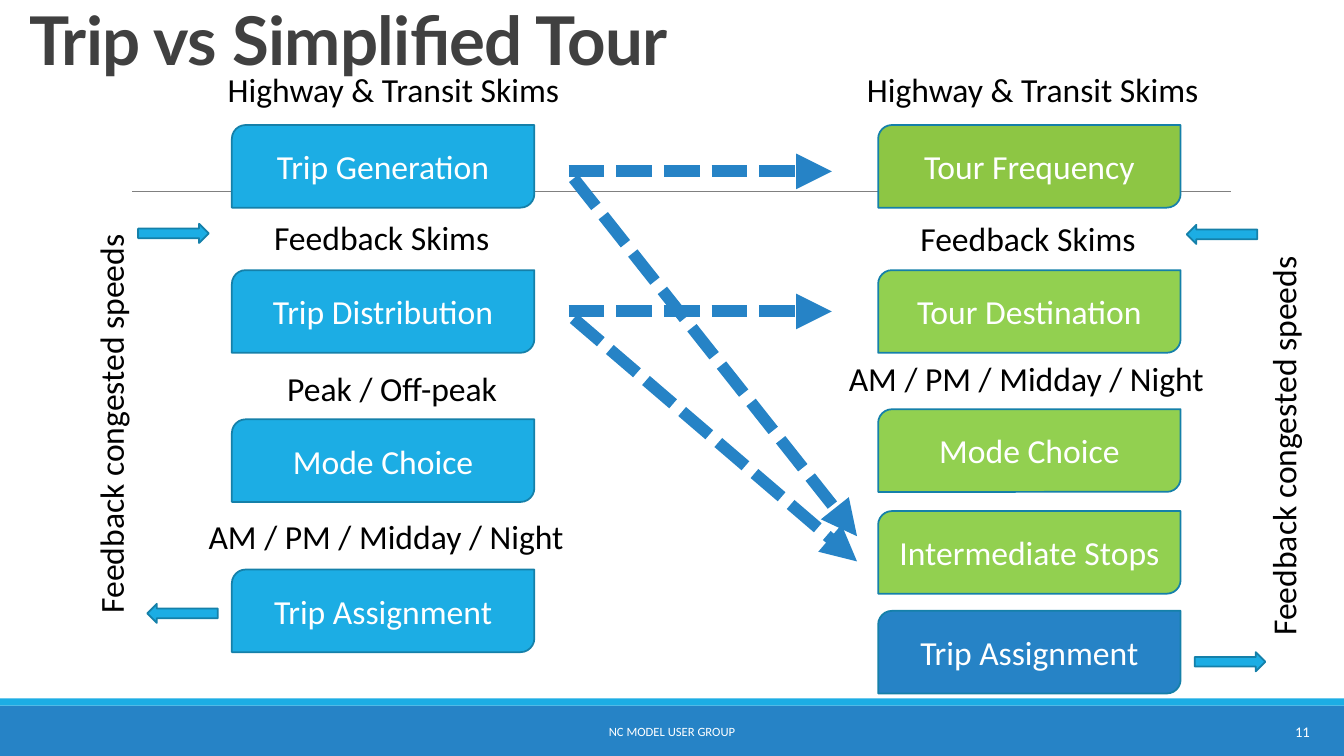
from collections import namedtuple
from dataclasses import dataclass

from lxml import etree
from pptx import Presentation
from pptx.dml.color import RGBColor
from pptx.enum.dml import MSO_LINE
from pptx.enum.shapes import MSO_CONNECTOR, MSO_SHAPE
from pptx.enum.text import MSO_ANCHOR, PP_ALIGN
from pptx.oxml.ns import qn
from pptx.util import Inches, Pt

RECT = MSO_SHAPE.RECTANGLE
STEP = MSO_SHAPE.ROUND_2_DIAG_RECTANGLE
ARROW = MSO_SHAPE.RIGHT_ARROW
STRAIGHT = MSO_CONNECTOR.STRAIGHT
DASH = MSO_LINE.SQUARE_DOT
TOP, MIDDLE, BOTTOM = MSO_ANCHOR.TOP, MSO_ANCHOR.MIDDLE, MSO_ANCHOR.BOTTOM
LEFT, CENTER, RIGHT = PP_ALIGN.LEFT, PP_ALIGN.CENTER, PP_ALIGN.RIGHT

Box = namedtuple("Box", "x y w h")


@dataclass(frozen=True)
class Theme:
    sky: str = "1CADE4"
    blue: str = "2683C6"
    edge: str = "1580A9"
    moss: str = "8DC644"
    lime: str = "92D050"
    gray: str = "808080"
    dark: str = "404040"
    black: str = "000000"
    white: str = "FFFFFF"
    head: str = "Lato"
    body: str = "Calibri"
    title: float = 48
    text: float = 24
    page: float = 10.5
    foot: float = 9


THEME = Theme()


def inside(box, dx, dy, w, h):
    """Return a box of size w by h, offset from the corner of another box."""
    return Box(box.x + dx, box.y + dy, w, h)


def write(shape, text, color=THEME.black, size=THEME.text, name=THEME.body,
          bold=False, align=LEFT, anchor=TOP):
    frame = shape.text_frame
    frame.word_wrap = True
    frame.vertical_anchor = anchor
    par = frame.paragraphs[0]
    par.alignment = align
    run = par.add_run()
    run.text = text
    style = {"name": name, "size": Pt(size), "bold": bold}
    for key, value in style.items():
        setattr(run.font, key, value)
    run.font.color.rgb = RGBColor.from_string(color)
    return par


def label(slide, box, text, turn=0, **style):
    shape = slide.shapes.add_textbox(*map(Inches, box))
    shape.rotation = turn
    return write(shape, text, **style)


def block(slide, kind, box, fill, edge=None, turn=0):
    shape = slide.shapes.add_shape(kind, *map(Inches, box))
    shape.shadow.inherit = False
    shape.rotation = turn
    shape.fill.solid()
    shape.fill.fore_color.rgb = RGBColor.from_string(fill)
    if edge:
        shape.line.color.rgb = RGBColor.from_string(edge)
        shape.line.width = Pt(1.25)
    else:
        shape.line.fill.background()
    return shape


def link(slide, box, color, width):
    """Draw a line from the box's top left to its bottom right."""
    ends = (box.x, box.y, box.x + box.w, box.y + box.h)
    line = slide.shapes.add_connector(STRAIGHT, *map(Inches, ends))
    line.line.color.rgb = RGBColor.from_string(color)
    line.line.width = Pt(width)
    etree.SubElement(line._element.spPr, qn("a:effectLst"))
    return line.line


def header(slide, box):
    link(slide, Box(1.31, 1.9, 10.9, 0), THEME.gray, 0.5)
    par = label(slide, box, "Trip vs Simplified Tour", color=THEME.dark,
                size=THEME.title, name=THEME.head, bold=True, anchor=BOTTOM)
    par.line_spacing = 0.85
    par.runs[0].font._element.set("spc", "-50")


def footer(slide, box):
    band = 0.07
    block(slide, RECT, inside(box, 0, band, box.w, box.h - band), THEME.blue)
    block(slide, RECT, inside(box, 0, 0, box.w, band), THEME.sky)
    style = {"color": THEME.white, "anchor": MIDDLE}
    label(slide, inside(box, 11.66, 0.13, 1.43, 0.4), "11",
          size=THEME.page, align=RIGHT, **style)
    label(slide, inside(box, 4.03, 0.13, 5.27, 0.4), "NC MODEL USER GROUP",
          size=THEME.foot, align=CENTER, **style)


def column(slide, box, steps, notes, side, arrows):
    """Draw one model's steps, its notes and the feedback beside it."""
    for text, dy, fill in steps:
        shape = block(slide, STEP, inside(box, 0, dy, box.w, 0.82),
                      fill, THEME.edge)
        write(shape, text, color=THEME.white, align=CENTER, anchor=MIDDLE)
    for text, dx, dy in notes:
        label(slide, inside(box, dx, dy, 3.96, 0.5), text)
    label(slide, inside(box, *side, 4.19, 0.5),
          "Feedback congested speeds", turn=270)
    for dx, dy, turn in arrows:
        block(slide, ARROW, inside(box, dx, dy, 0.7, 0.19),
              THEME.sky, THEME.edge, turn)


def links(slide, box):
    """Draw two dashed arrows from each of two rows: level and down."""
    down = box.y + box.h
    for dy, drop in ((0, 3.55), (1.39, 2.41)):
        level = inside(box, 0, dy, 2.61, 0)
        slant = inside(box, 0.05, dy + 0.07, box.w - 0.05, drop)
        for part in (level, slant):
            line = link(slide, part, THEME.blue, 8.5)
            line.dash_style = DASH
            etree.SubElement(line._get_or_add_ln(), qn("a:tailEnd"),
                             type="triangle")


def main():
    deck = Presentation()
    deck.slide_width, deck.slide_height = Inches(13.33), Inches(7.5)
    slide = deck.slides.add_slide(deck.slide_layouts[6])
    footer(slide, Box(0, 6.93, 13.33, 0.57))
    header(slide, Box(0.19, -0.76, 11, 1.59))
    column(
        slide, Box(2.3, 0.63, 3, 5.84),
        steps=[("Trip Generation", 0.61, THEME.sky),
               ("Trip Distribution", 2.05, THEME.sky),
               ("Mode Choice", 3.53, THEME.sky),
               ("Trip Assignment", 5.02, THEME.sky)],
        notes=[("Highway & Transit Skims", -0.14, 0),
               ("Feedback Skims", 0.32, 1.47),
               ("Peak / Off-peak", 0.45, 2.97),
               ("AM / PM / Midday / Night", -0.33, 4.44)],
        side=(-3.3, 3.21),
        arrows=[(-0.93, 1.59, 0), (-0.84, 5.36, 180)])
    column(
        slide, Box(8.71, 0.63, 3, 6.25),
        steps=[("Tour Frequency", 0.61, THEME.moss),
               ("Tour Destination", 2.05, THEME.lime),
               ("Mode Choice", 3.43, THEME.lime),
               ("Intermediate Stops", 4.44, THEME.lime),
               ("Trip Assignment", 5.43, THEME.blue)],
        notes=[("Highway & Transit Skims", -0.21, 0),
               ("Feedback Skims", 0.32, 1.48),
               ("AM / PM / Midday / Night", -0.39, 2.87)],
        side=(1.92, 3.43),
        arrows=[(3.06, 1.6, 180), (3.14, 5.84, 0)])
    links(slide, Box(5.64, 1.7, 2.86, 3.87))
    deck.save("out.pptx")


if __name__ == "__main__":
    main()
